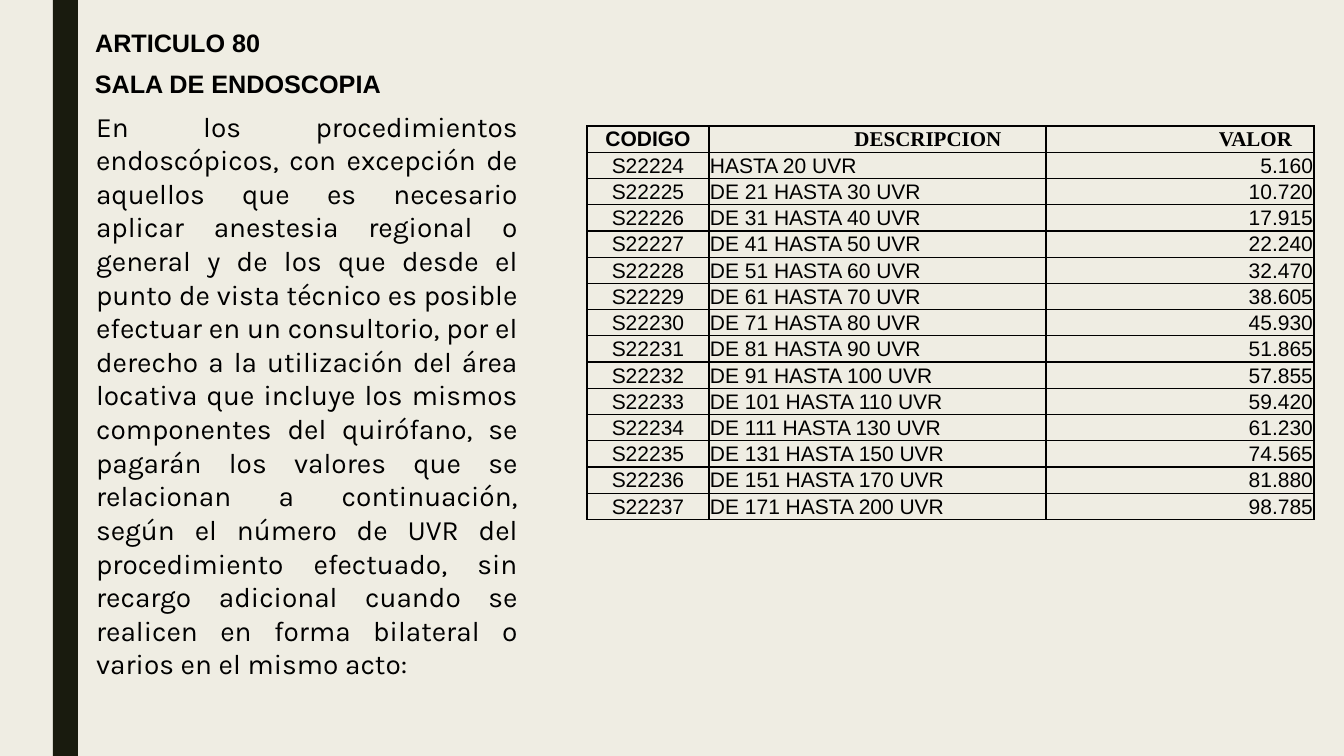
from lxml.etree import SubElement
from pptx import Presentation
from pptx.dml.color import RGBColor
from pptx.enum.shapes import MSO_SHAPE
from pptx.enum.text import MSO_ANCHOR, MSO_AUTO_SIZE, PP_ALIGN
from pptx.oxml.ns import qn
from pptx.util import Pt

# Content
ARTICLE = "ARTICULO 80"
SECTION = "SALA DE ENDOSCOPIA"
EXPLANATION = (
    "En los procedimientos endoscópicos, con excepción de aquellos que es necesario "
    "aplicar anestesia regional o general y de los que desde el punto de vista técnico "
    "es posible efectuar en un consultorio, por el derecho a la utilización del área "
    "locativa que incluye los mismos componentes del quirófano, se pagarán los valores "
    "que se relacionan a continuación, según el número de UVR del procedimiento "
    "efectuado, sin recargo adicional cuando se realicen en forma bilateral o varios "
    "en el mismo acto:"
)
# Heading, font, left margin in px
HEADINGS = [
    ("CODIGO", "Arial", 0),
    ("DESCRIPCION", "Times New Roman", 101),
    ("VALOR", "Times New Roman", 151),
]
FEES = [
    ("S22224", "HASTA 20 UVR", "5.160"),
    ("S22225", "DE 21 HASTA 30 UVR", "10.720"),
    ("S22226", "DE 31 HASTA 40 UVR", "17.915"),
    ("S22227", "DE 41 HASTA 50 UVR", "22.240"),
    ("S22228", "DE 51 HASTA 60 UVR", "32.470"),
    ("S22229", "DE 61 HASTA 70 UVR", "38.605"),
    ("S22230", "DE 71 HASTA 80 UVR", "45.930"),
    ("S22231", "DE 81 HASTA 90 UVR", "51.865"),
    ("S22232", "DE 91 HASTA 100 UVR", "57.855"),
    ("S22233", "DE 101 HASTA 110 UVR", "59.420"),
    ("S22234", "DE 111 HASTA 130 UVR", "61.230"),
    ("S22235", "DE 131 HASTA 150 UVR", "74.565"),
    ("S22236", "DE 151 HASTA 170 UVR", "81.880"),
    ("S22237", "DE 171 HASTA 200 UVR", "98.785"),
]
COLUMN_WIDTHS = [122, 337, 268]
COLUMN_ALIGNS = [PP_ALIGN.CENTER, PP_ALIGN.LEFT, PP_ALIGN.RIGHT]
TABLE_LEFT, TABLE_TOP, TABLE_HEIGHT = 587, 126, 394
SLIDE_WIDTH, SLIDE_HEIGHT = 1344, 756
INK, BAND, PAPER = "000000", "191B0E", "EFEDE3"


def px(length):
    return round(length * 914400 / 100.8)


def color(hex_code):
    return RGBColor.from_string(hex_code)


def place(shape, left, top, width, height):
    shape.left, shape.top = px(left), px(top)
    shape.width, shape.height = px(width), px(height)


def write(frame, text, font, size, bold=False, align=PP_ALIGN.LEFT, indent=0):
    paragraph = frame.paragraphs[0]
    paragraph.alignment = align
    paragraph.space_before = Pt(0)
    properties = paragraph._p.get_or_add_pPr()
    properties.set("marL", str(px(indent)))
    properties.set("indent", "0")
    run = paragraph.add_run()
    run.text = text
    run.font.name, run.font.size, run.font.bold = font, Pt(size), bold
    run.font.color.rgb = color(INK)
    return paragraph


def write_heading(shape, text):
    frame = shape.text_frame
    frame.word_wrap = False
    frame.auto_size = MSO_AUTO_SIZE.NONE
    frame.vertical_anchor = MSO_ANCHOR.TOP
    write(frame, text, "Arial", 18, bold=True)


def style_cell(cell):
    cell.margin_left = cell.margin_right = cell.margin_top = px(1)
    cell.margin_bottom = 0
    cell.vertical_anchor = MSO_ANCHOR.MIDDLE
    properties = cell._tc.get_or_add_tcPr()
    for side in ("lnL", "lnR", "lnT", "lnB"):
        border = SubElement(properties, qn("a:" + side), w=str(Pt(1)))
        fill = SubElement(border, qn("a:solidFill"))
        SubElement(fill, qn("a:srgbClr"), val=INK)
    cell.fill.background()


prs = Presentation()
prs.slide_width, prs.slide_height = px(SLIDE_WIDTH), px(SLIDE_HEIGHT)
slide = prs.slides.add_slide(prs.slide_layouts[1])
slide.background.fill.solid()
slide.background.fill.fore_color.rgb = color(PAPER)

# Side band
band = slide.shapes.add_shape(MSO_SHAPE.RECTANGLE, px(53), 0, px(25), px(SLIDE_HEIGHT))
band.shadow.inherit = False
band.fill.solid()
band.fill.fore_color.rgb = color(BAND)
band.line.fill.background()

# Headings
article = slide.shapes.title
place(article, 85, 22, 188, 41)
write_heading(article, ARTICLE)
section = slide.shapes.add_textbox(px(85), px(63), px(309), px(41))
write_heading(section, SECTION)

# Explanation
explanation = slide.placeholders[1]
place(explanation, 86, 104, 442, 582)
explanation.text_frame.word_wrap = True
explanation.text_frame.auto_size = MSO_AUTO_SIZE.NONE
explanation_text = write(explanation.text_frame, EXPLANATION, "Karla", 20,
                         align=PP_ALIGN.JUSTIFY)
explanation_text.line_spacing = Pt(24)
SubElement(explanation_text._p.get_or_add_pPr(), qn("a:buNone"))

# Fee table
fees = slide.shapes.add_table(
    len(FEES) + 1, len(HEADINGS), px(TABLE_LEFT), px(TABLE_TOP),
    px(sum(COLUMN_WIDTHS)), px(TABLE_HEIGHT)).table
fees.first_row = fees.horz_banding = False
for column, width in zip(fees.columns, COLUMN_WIDTHS):
    column.width = px(width)
for row in fees.rows:
    row.height = px(TABLE_HEIGHT / len(fees.rows))
for cell in fees.iter_cells():
    style_cell(cell)
for c, (heading, font, indent) in enumerate(HEADINGS):
    write(fees.cell(0, c).text_frame, heading, font, 15, True, PP_ALIGN.CENTER, indent)
for r, fee in enumerate(FEES, start=1):
    for c, value in enumerate(fee):
        write(fees.cell(r, c).text_frame, value, "Arial", 15, align=COLUMN_ALIGNS[c])

prs.save("out.pptx")
